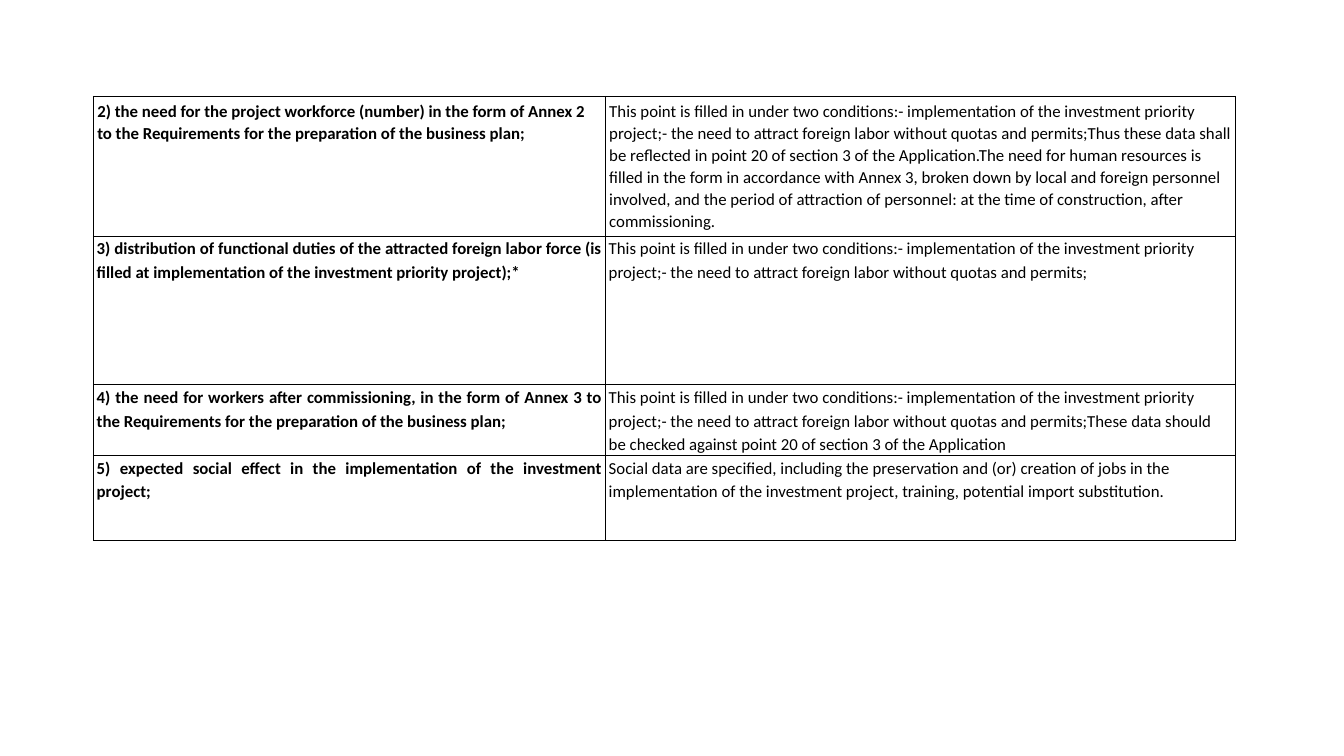
from dataclasses import dataclass

import lxml.etree
import pptx
import pptx.dml.color
import pptx.enum.text
import pptx.oxml.ns
import pptx.util

Inches = pptx.util.Inches
Pt = pptx.util.Pt
Align = pptx.enum.text.PP_ALIGN


@dataclass(frozen=True)
class Theme:
    ink: str = "000000"
    font: str = "Calibri"
    text_size: int = 24
    border_width: int = 1


@dataclass(frozen=True)
class RowStyle:
    side: float
    edge: float
    spacing: float
    after: int
    title_align: Align


THEME = Theme()
OPENING = RowStyle(0.08, 0.08, 1.07, 12, Align.LEFT)
FOLLOWING = RowStyle(0.07, 0, 1.15, 0, Align.JUSTIFY)

CONDITIONS = (
    "This point is filled in under two conditions:- implementation of the investment "
    "priority project;- the need to attract foreign labor without quotas and permits;"
)
COLUMN_WIDTHS = (10.16, 12.51)
REQUIREMENTS = [
    (
        2.75,
        OPENING,
        "2) the need for the project workforce (number) in the form of Annex 2 to the "
        "Requirements for the preparation of the business plan;",
        CONDITIONS + "Thus these data shall be reflected in point 20 of section 3 of the "
        "Application.The need for human resources is filled in the form in accordance with "
        "Annex 3, broken down by local and foreign personnel involved, and the period of "
        "attraction of personnel: at the time of construction, after commissioning.",
    ),
    (
        2.95,
        FOLLOWING,
        "3) distribution of functional duties of the attracted foreign labor force (is "
        "filled at implementation of the investment priority project);*",
        CONDITIONS,
    ),
    (
        1.38,
        FOLLOWING,
        "4) the need for workers after commissioning, in the form of Annex 3 to the "
        "Requirements for the preparation of the business plan;",
        CONDITIONS + "These data should be checked against point 20 of section 3 of the "
        "Application",
    ),
    (
        1.68,
        FOLLOWING,
        "5) expected social effect in the implementation of the investment project;",
        "Social data are specified, including the preservation and (or) creation of jobs in "
        "the implementation of the investment project, training, potential import "
        "substitution.",
    ),
]


def draw_borders(cell):
    qn = pptx.oxml.ns.qn
    properties = cell._tc.get_or_add_tcPr()
    for position, side in enumerate(("lnL", "lnR", "lnT", "lnB")):
        border = lxml.etree.Element(qn(f"a:{side}"), w=str(Pt(THEME.border_width)))
        fill = lxml.etree.SubElement(border, qn("a:solidFill"))
        lxml.etree.SubElement(fill, qn("a:srgbClr"), val=THEME.ink)
        properties.insert(position, border)


def fill_cell(cell, wording, style, bold, align):
    cell.fill.background()
    cell.margin_left = cell.margin_right = Inches(style.side)
    cell.margin_top = cell.margin_bottom = Inches(style.edge)
    cell.text = wording
    paragraph = cell.text_frame.paragraphs[0]
    paragraph.alignment = align
    paragraph.line_spacing = style.spacing
    paragraph.space_after = Pt(style.after)
    paragraph.font.name = THEME.font
    paragraph.font.size = Pt(THEME.text_size)
    paragraph.font.bold = bold
    paragraph.font.color.rgb = pptx.dml.color.RGBColor.from_string(THEME.ink)
    draw_borders(cell)


def add_requirements(slide, left, top, width, height):
    requirements = slide.shapes.add_table(
        len(REQUIREMENTS), len(COLUMN_WIDTHS),
        Inches(left), Inches(top), Inches(width), Inches(height),
    ).table
    requirements.first_row = False
    requirements.horz_banding = False
    for column, share in zip(requirements.columns, COLUMN_WIDTHS):
        column.width = Inches(width * share / sum(COLUMN_WIDTHS))
    for row, (row_height, style, title, guidance) in zip(requirements.rows, REQUIREMENTS):
        row.height = Inches(row_height)
        title_cell, guidance_cell = row.cells
        fill_cell(title_cell, title, style, True, style.title_align)
        fill_cell(guidance_cell, guidance, style, False, Align.LEFT)


def main():
    deck = pptx.Presentation()
    deck.slide_width = Inches(26.67)
    deck.slide_height = Inches(15)
    slide = deck.slides.add_slide(deck.slide_layouts[6])
    add_requirements(slide, 1.85, 1.91, 22.67, 8.76)
    deck.save("out.pptx")


if __name__ == "__main__":
    main()
